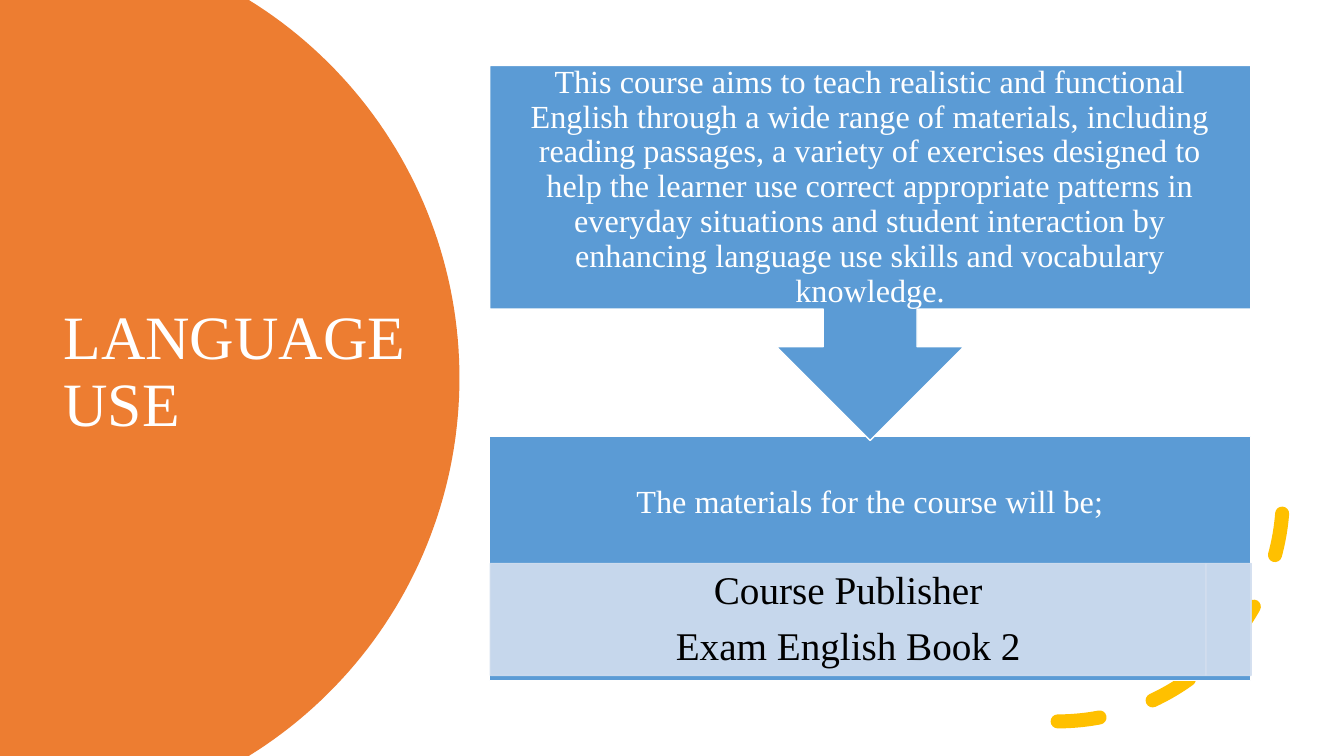
import math

from lxml import etree
from pptx import Presentation
from pptx import util as u
from pptx.dml.color import RGBColor
from pptx.enum import dml, shapes, text
from pptx.oxml.ns import qn
from pptx.util import Cm

COLOURS = {
    "orange": "ED7D31",
    "blue": "5B9BD5",
    "pale": "D2DEEF",
    "gold": "FFC000",
    "white": "FFFFFF",
    "black": "000000",
}
FONT = "Times New Roman"
SLIDE_W, SLIDE_H = 33.87, 19.05
PANEL_LEFT, PANEL_W = 12.34, 19.18
STRIP_TOP, STRIP_H = 14.2, 2.82
STRIP_W, END_W = 18.03, 1.14


def colour(name):
    return RGBColor.from_string(COLOURS[name])


def set_alpha(fill, percent):
    """Make every solid colour below the given fill or line element see-through."""
    for rgb in fill.iter(qn("a:srgbClr")):
        etree.SubElement(rgb, qn("a:alpha")).set("val", str(percent * 1000))


def add_block(slide, kind, left, top, width, height, fill, line, alpha=None):
    block = slide.shapes.add_shape(kind, Cm(left), Cm(top), Cm(width), Cm(height))
    block.shadow.inherit = False
    block.fill.solid()
    block.fill.fore_color.rgb = colour(fill)
    block.line.color.rgb = colour(line)
    block.line.width = u.Pt(1)
    if alpha:
        set_alpha(block._element.spPr, alpha)
    return block


def write(shape, lines, size, font_colour, insets, align=text.PP_ALIGN.CENTER, after=0):
    """Fill a shape with paragraphs; insets are left, top, right, bottom in cm."""
    frame = shape.text_frame
    frame.word_wrap = True
    frame.vertical_anchor = text.MSO_ANCHOR.MIDDLE
    (frame.margin_left, frame.margin_top,
     frame.margin_right, frame.margin_bottom) = map(Cm, insets)
    frame.text = "\n".join(lines)
    for paragraph in frame.paragraphs:
        paragraph.alignment = align
        paragraph.line_spacing = 0.9
        paragraph.space_after = u.Pt(after)
        paragraph.font.name = FONT
        paragraph.font.size = u.Pt(size)
        paragraph.font.color.rgb = colour(font_colour)


def add_disc(slide, centre_x, radius, steps=90):
    """Draw the part of a large circle that lies on the slide, from its left edge."""
    centre_y = SLIDE_H / 2
    limit = math.asin(centre_y / radius)
    angles = [limit * (2 * step / steps - 1) for step in range(steps + 1)]
    rim = [(Cm(centre_x + radius * math.cos(a)), Cm(centre_y + radius * math.sin(a)))
           for a in angles]
    builder = slide.shapes.build_freeform(0, 0)
    builder.add_line_segments(rim + [(0, Cm(SLIDE_H))], close=True)
    disc = builder.convert_to_shape()
    disc.shadow.inherit = False
    disc.fill.solid()
    disc.fill.fore_color.rgb = colour("orange")
    disc.line.fill.background()


def add_dashed_arc(slide, left, top, size):
    arc = slide.shapes.add_shape(shapes.MSO_SHAPE.ARC, Cm(left), Cm(top), Cm(size), Cm(size))
    arc.shadow.inherit = False
    arc.fill.background()
    arc.line.color.rgb = colour("gold")
    arc.line.width = u.Pt(10)
    arc.line.dash_style = dml.MSO_LINE.DASH
    arc.line._get_or_add_ln().set("cap", "rnd")
    arc._element.spPr.find(qn("a:xfrm")).set("flipV", "1")


def main():
    prs = Presentation()
    prs.slide_width, prs.slide_height = Cm(SLIDE_W), Cm(SLIDE_H)
    slide = prs.slides.add_slide(prs.slide_layouts[6])

    # Title on the orange disc
    add_disc(slide, 0.38, 11.2)
    title = slide.shapes.add_textbox(Cm(1.35), Cm(3.2), Cm(9.88), Cm(12.4))
    write(title, ["LANGUAGE USE"], 44, "white", (0.25, 0.13, 0.25, 0.13),
          text.PP_ALIGN.LEFT)

    # Dashed accent behind the panels
    add_dashed_arc(slide, 20.98, 6.83, 11.35)

    # Materials panel, its heading above the pale strip
    rectangle = shapes.MSO_SHAPE.RECTANGLE
    materials = add_block(slide, rectangle, PANEL_LEFT, 11, PANEL_W, 6.15, "blue", "white")
    write(materials, ["The materials for the course will be;"], 23, "white",
          (0.46, 0, 0.46, STRIP_H))
    books = add_block(slide, rectangle, PANEL_LEFT + 0.02, STRIP_TOP, STRIP_W, STRIP_H,
                      "pale", "pale", 90)
    write(books, ["Course Publisher", "Exam English Book 2"], 28, "black",
          (0.56, 0.1, 0.56, 0.1), after=10)
    add_block(slide, rectangle, PANEL_LEFT + 0.02 + STRIP_W, STRIP_TOP, END_W, STRIP_H,
              "pale", "pale", 90)

    # Course aim, pointing down to the materials
    aim = add_block(slide, shapes.MSO_SHAPE.DOWN_ARROW_CALLOUT, PANEL_LEFT, 1.65,
                    PANEL_W, 9.45, "blue", "white")
    write(aim, ["This course aims to teach realistic and functional English through a wide "
                "range of materials, including reading passages, a variety of exercises "
                "designed to help the learner use correct appropriate patterns in everyday "
                "situations and student interaction by enhancing language use skills and "
                "vocabulary knowledge."], 23, "white", (0.46, 0, 0.46, 0))

    prs.save("out.pptx")


if __name__ == "__main__":
    main()
